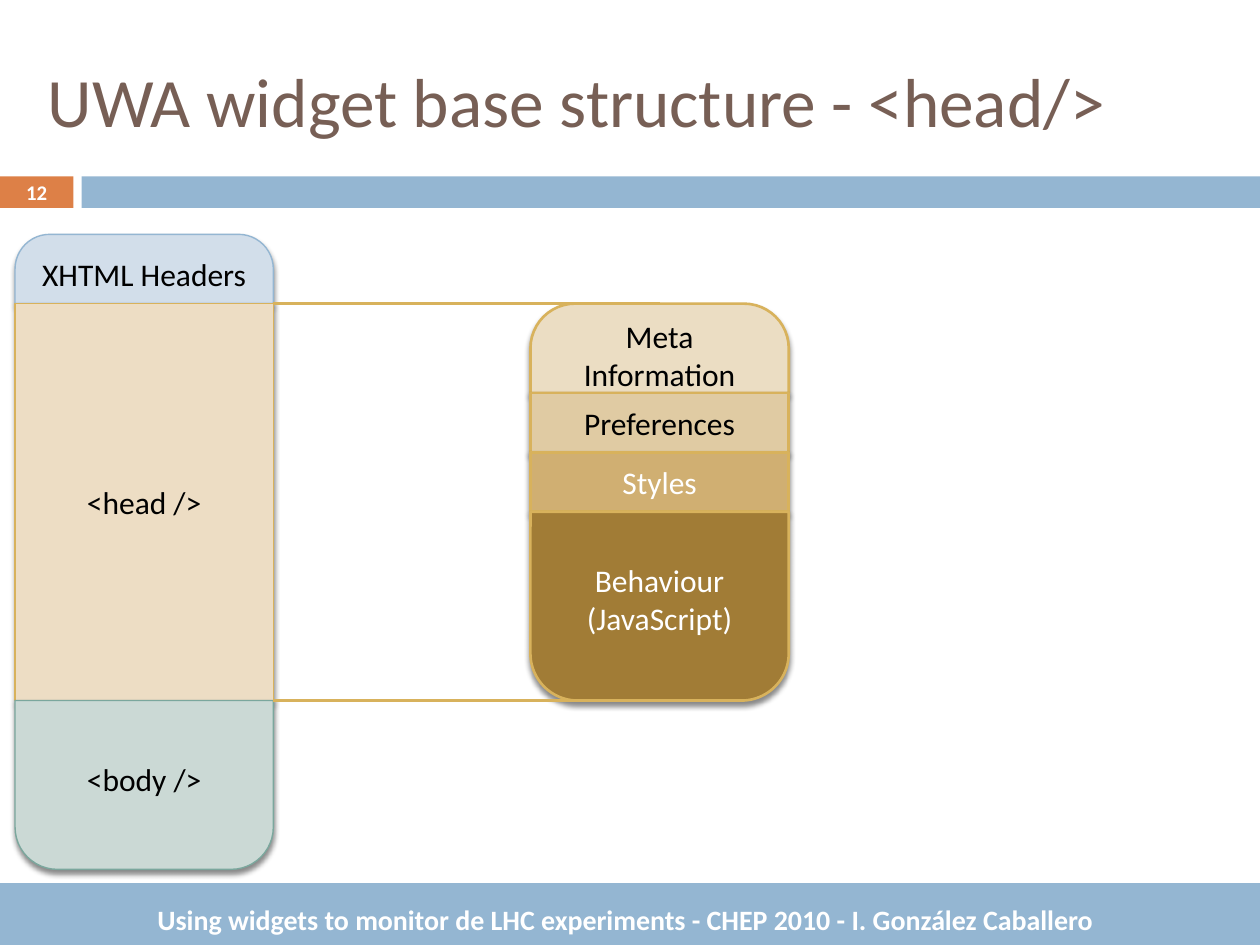
from lxml import etree
from pptx import Presentation, util as u
from pptx.dml.color import RGBColor
from pptx.enum import shapes, text
from pptx.oxml import ns

RECT = shapes.MSO_SHAPE.RECTANGLE
ROUND = shapes.MSO_SHAPE.ROUND_2_SAME_RECTANGLE
TOP, FLAT, BASE = (0.5, 0), None, (0, 0.25)
BLUE, ORANGE, BROWN, GOLD, GREEN = "94B6D2", "DD8047", "775F55", "D8B25C", "7BA79D"
BLACK, WHITE = "000000", "FFFFFF"


def tint(code):
    return RGBColor.from_string(code)


class Deck:
    """Holds the style and the current slide, and draws each kind of element."""

    font = "Calibri"
    size = 18

    def __init__(self, wide, high):
        self.show = Presentation()
        self.show.slide_width, self.show.slide_height = u.Pt(wide), u.Pt(high)
        self.slide = self.show.slides.add_slide(self.show.slide_layouts[6])

    def letter(self, shape, words, size, color, bold=False, align=text.PP_ALIGN.CENTER):
        frame = shape.text_frame
        frame.word_wrap = True
        frame.vertical_anchor = text.MSO_ANCHOR.MIDDLE
        frame.text = words
        para = frame.paragraphs[0]
        para.alignment = align
        para.font.name, para.font.size, para.font.bold = self.font, u.Pt(size), bold
        para.font.color.rgb = tint(color)

    def label(self, box, words, size, color, **style):
        shape = self.slide.shapes.add_textbox(*map(u.Pt, box))
        self.letter(shape, words, size, color, **style)

    def bar(self, box, fill):
        shape = self.slide.shapes.add_shape(RECT, *map(u.Pt, box))
        shape.shadow.inherit = False
        shape.fill.solid()
        shape.fill.fore_color.rgb = tint(fill)
        shape.line.fill.background()

    def block(self, host, box, curve, words, fill, edge, width, color):
        shape = host.add_shape(ROUND if curve else RECT, *map(u.Pt, box))
        for i, bend in enumerate(curve or ()):
            shape.adjustments[i] = bend
        shape.fill.solid()
        shape.fill.fore_color.rgb = tint(fill)
        shape.line.color.rgb = tint(edge)
        shape.line.width = u.Pt(width)
        self.shade(shape)
        self.letter(shape, words, self.size, color)

    def shade(self, shape):
        shape.shadow.inherit = False
        glow = shape._element.spPr.find(ns.qn("a:effectLst"))
        cast = etree.SubElement(glow, ns.qn("a:outerShdw"), blurRad=str(u.Pt(3)),
                                dist=str(u.Pt(2.4)), dir="5400000", rotWithShape="0")
        hue = etree.SubElement(cast, ns.qn("a:srgbClr"), val=BLACK)
        etree.SubElement(hue, ns.qn("a:alpha"), val="45000")

    def stack(self, host, left, top, wide, width, rows):
        for high, curve, words, fill, edge, color in rows:
            self.block(host, (left, top, wide, high), curve, words, fill, edge, width, color)
            top += high

    def line(self, start, end, color, width):
        link = self.slide.shapes.add_connector(
            shapes.MSO_CONNECTOR.STRAIGHT, *map(u.Pt, (*start, *end)))
        link.line.color.rgb = tint(color)
        link.line.width = u.Pt(width)
        etree.SubElement(link._element.spPr, ns.qn("a:effectLst"))


def main():
    deck = Deck(720, 540)
    deck.bar((0, 100.8, 42, 18), ORANGE)
    deck.bar((46.6, 100.8, 673.4, 18), BLUE)
    deck.bar((0, 504.7, 720, 35.3), BLUE)
    deck.label((20.2, 18, 680.4, 77.8), "UWA widget base structure - <head/>", 39.6, BROWN,
               align=text.PP_ALIGN.LEFT)
    deck.label((54, 511.2, 607, 28.8),
               "Using widgets to monitor de LHC experiments - CHEP 2010 - I. González Caballero",
               16, WHITE, bold=True)
    deck.label((0, 100, 42, 19.4), "12", 11.9, WHITE, bold=True)

    wide, left, right = 147.6, 8.6, 303.1
    top, head, high = 133.9, 39.6, 226.8
    deck.stack(deck.slide.shapes, left, top, wide, 0.79, [
        (head, TOP, "XHTML Headers", "D2DEEA", BLUE, BLACK),
        (high, FLAT, "<head />", "EDDDC4", GOLD, BLACK),
        (96.5, BASE, "<body />", "CBD9D5", GREEN, BLACK),
    ])
    group = deck.slide.shapes.add_group_shape()
    deck.stack(group.shapes, right, top + head, wide, 1.5, [
        (51, TOP, "Meta Information", "EBDDC3", GOLD, BLACK),
        (34, FLAT, "Preferences", "E0CBA3", GOLD, BLACK),
        (34, FLAT, "Styles", "D0AF72", GOLD, WHITE),
        (107.8, BASE, "Behaviour (JavaScript)", "A17C36", GOLD, WHITE),
    ])
    for y in (top + head, top + head + high):
        deck.line((left + wide, y), (right + wide / 2, y), GOLD, 1.5)
    deck.show.save("out.pptx")


if __name__ == "__main__":
    main()
